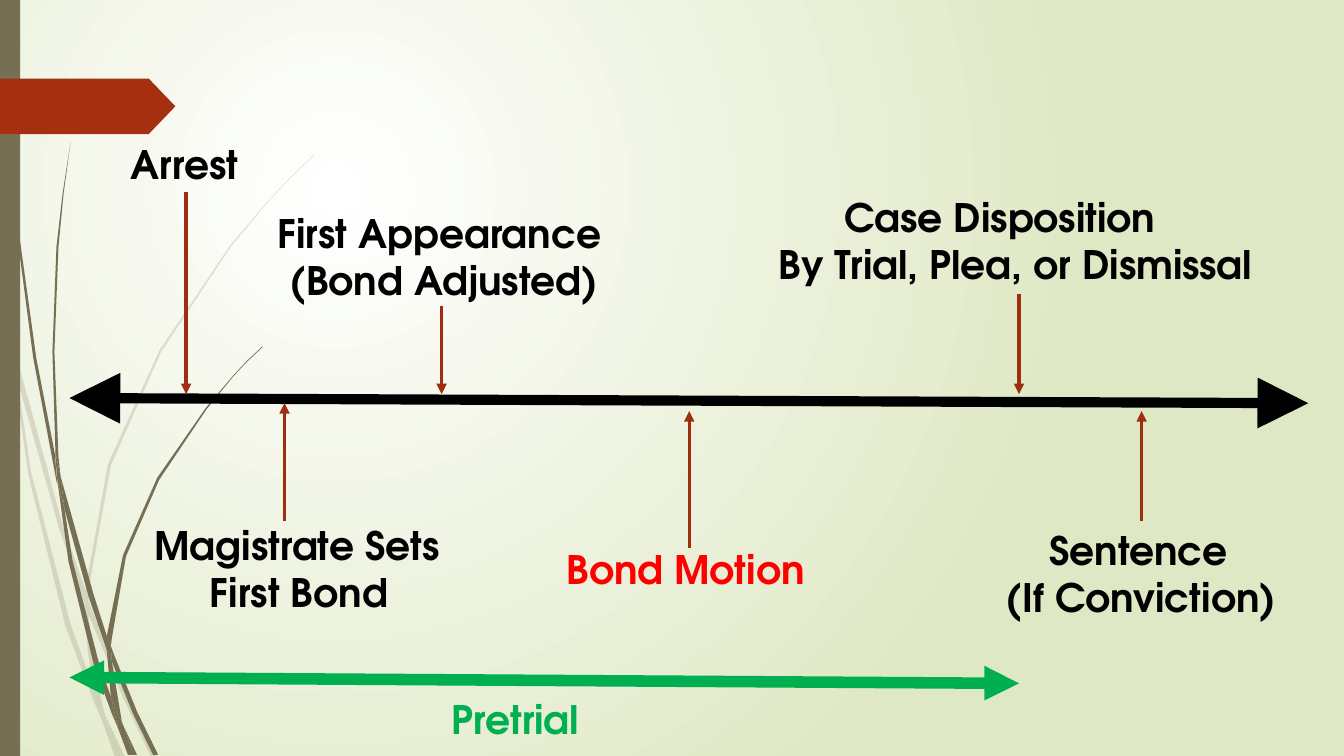
from dataclasses import dataclass
from typing import NamedTuple

from lxml.etree import SubElement
from pptx import Presentation
from pptx.dml.color import RGBColor as Rgb
from pptx.enum.shapes import MSO_CONNECTOR as Link, MSO_SHAPE as Kind
from pptx.enum.text import MSO_AUTO_SIZE as Fit
from pptx.oxml.ns import qn
from pptx.util import Cm, Pt


@dataclass(frozen=True)
class Theme:
    font: str = "TeX Gyre Adventor"
    size: float = 28
    thin: float = 2.5
    axis: float = 7.25
    span: float = 8.25
    black: str = "000000"
    red: str = "FF0000"
    green: str = "00B050"
    rust: str = "A53010"
    stem: str = "9E2E0F"
    olive: str = "766F54"
    pale: str = "FFFFFF"
    lime: str = "DFE8C4"


class Stem(NamedTuple):
    x: float
    start: float
    end: float
    site: int | None = None  # side of the label that the stem is joined to


class Line(NamedTuple):
    text: str
    indent: float = 0


@dataclass(frozen=True)
class Label:
    left: float
    top: float
    width: float
    lines: tuple[Line, ...]
    color: str
    stem: Stem | None = None


Blade = tuple[tuple[int, int], ...]

THEME = Theme()
WIDE, HIGH = 33.87, 19.05
GRID = Cm(2.54) / 100  # unit of the blade outlines

FAINT: tuple[Blade, ...] = (
    ((11, 350), (9, 322), (0, 282), (0, 299), (10, 344)),
    ((58, 522), (84, 599), (85, 586), (62, 520), (14, 345), (17, 376)),
    ((92, 607), (88, 596), (88, 610), (123, 694), (150, 751), (155, 751), (127, 692)),
    ((119, 751), (124, 751), (105, 711)),
    ((93, 683), (70, 619), (31, 469), (17, 376), (11, 350), (28, 470), (65, 621),
     (92, 693), (101, 714), (99, 707)),
    ((84, 599), (87, 646), (93, 683), (96, 692), (105, 711), (103, 706), (91, 646),
     (88, 610), (88, 608)),
    ((88, 584), (110, 462), (160, 349), (229, 245), (268, 198), (290, 175), (312, 154),
     (312, 153), (289, 175), (268, 197), (228, 244), (158, 348), (107, 461), (85, 584),
     (85, 586), (88, 596)),
    ((101, 714), (114, 751), (119, 751)),
    ((88, 608), (88, 610), (88, 596), (85, 586), (84, 599)),
    ((96, 692), (93, 683), (99, 707), (101, 714), (119, 751), (105, 711)),
)
DARK: tuple[Blade, ...] = (
    ((7, 110), (17, 233), (33, 355), (56, 477), (57, 481), (55, 457), (55, 453), (36, 355),
     (19, 232), (8, 109), (5, 48), (4, 0), (3, 0), (4, 48)),
    ((88, 592), (106, 645), (106, 633), (106, 631), (93, 590), (60, 472), (64, 505)),
    ((113, 649), (110, 641), (111, 656), (132, 708), (152, 749), (157, 749), (136, 706)),
    ((110, 691), (98, 657), (72, 556), (64, 505), (57, 477), (68, 557), (93, 659),
     (111, 708), (117, 722), (116, 717)),
    ((60, 472), (58, 453), (54, 349), (58, 245), (63, 193), (70, 141), (62, 193), (56, 245),
     (52, 349), (55, 449)),
    ((133, 749), (136, 749), (122, 719)),
    ((57, 477), (64, 505), (60, 472), (55, 449), (55, 453)),
    ((111, 633), (125, 552), (158, 476), (205, 406), (231, 374), (245, 359), (261, 344),
     (260, 344), (245, 358), (231, 373), (204, 405), (156, 474), (122, 551), (106, 631),
     (110, 641)),
    ((117, 722), (127, 749), (131, 749)),
    ((106, 645), (110, 691), (116, 706), (122, 719), (121, 716), (111, 656), (109, 651)),
    ((106, 645), (109, 651), (111, 656), (110, 641), (106, 631), (106, 633)),
    ((116, 706), (110, 691), (116, 717), (117, 722), (130, 749), (133, 749), (122, 719)),
)
LABELS = (
    Label(3.05, 3.4, 3.28, (Line("Arrest"),), THEME.black, Stem(4.69, 4.85, 9.93, 2)),
    Label(19.37, 4.75, 12.62,
          (Line("Case Disposition", 1.66), Line("By Trial, Plea, or Dismissal")),
          THEME.black, Stem(25.68, 7.39, 9.93, 2)),
    Label(6.75, 5.16, 8.86, (Line("First Appearance"), Line("(Bond Adjusted)", .3)),
          THEME.black, Stem(11.13, 7.7, 9.93)),
    Label(14.03, 13.61, 6.68, (Line("Bond Motion"),), THEME.red, Stem(17.37, 13.82, 10.36)),
    Label(3.65, 13, 7.82, (Line("Magistrate Sets"), Line("First Bond", 1.39)),
          THEME.black, Stem(7.17, 13.13, 10.16)),
    Label(25.1, 13.13, 7.34, (Line("Sentence", 1.09), Line("(If Conviction)")),
          THEME.black, Stem(28.77, 13.13, 10.36, 0)),
    Label(11.13, 17.4, 4.04, (Line("Pretrial"),), THEME.green),
)


def paint(shape, color: str, alpha: int = 100) -> None:
    shape.shadow.inherit = False
    shape.line.fill.background()
    shape.fill.solid()
    shape.fill.fore_color.rgb = Rgb.from_string(color)
    if alpha < 100:
        tone = shape.element.spPr.find(qn("a:solidFill"))[0]
        SubElement(tone, qn("a:alpha")).set("val", str(alpha * 1000))


def glow(slide) -> None:
    """Fill the background with a round gradient centred in the upper left."""
    fill = slide.background.fill
    fill.gradient()
    for stop, color in zip(fill.gradient_stops, (THEME.pale, THEME.lime)):
        stop.color.rgb = Rgb.from_string(color)
    grad = slide.element.find(".//" + qn("a:gradFill"))
    grad.remove(grad.find(qn("a:lin")))
    ring = SubElement(grad, qn("a:path"))
    ring.set("path", "circle")
    rect = SubElement(ring, qn("a:fillToRect"))
    for side, share in zip("ltrb", (50, 50, 100, 100)):
        rect.set(side, str(share * 1000))


def grow(slide, blade: Blade, alpha: int) -> None:
    """Draw one part of the grass."""
    first, *rest = blade
    form = slide.shapes.build_freeform(*first, scale=GRID)
    form.add_line_segments(rest)
    paint(form.convert_to_shape(), THEME.olive, alpha)


def arrow(slide, start: tuple[float, float], end: tuple[float, float],
          color: str, weight: float, tips: tuple[str, ...] = ("tailEnd",),
          size: str = "med"):
    line = slide.shapes.add_connector(Link.STRAIGHT, *map(Cm, start + end))
    line.line.color.rgb = Rgb.from_string(color)
    line.line.width = Pt(weight)
    stroke = line.element.spPr.find(qn("a:ln"))
    for tip in tips:
        head = SubElement(stroke, qn("a:" + tip))
        for key, value in (("type", "triangle"), ("w", size), ("len", size)):
            head.set(key, value)
    SubElement(line.element.spPr, qn("a:effectLst"))
    return line


def write(slide, label: Label) -> None:
    """Draw a label and the stem that ties it to the timeline."""
    high = .25 + 1.2 * len(label.lines)
    box = slide.shapes.add_textbox(*map(Cm, (label.left, label.top, label.width, high)))
    frame = box.text_frame
    frame.word_wrap = False
    frame.auto_size = Fit.SHAPE_TO_FIT_TEXT
    frame.text = "\n".join(line.text for line in label.lines)
    for para, line in zip(frame.paragraphs, label.lines):
        font = para.font
        font.name, font.size, font.bold = THEME.font, Pt(THEME.size), True
        font.color.rgb = Rgb.from_string(label.color)
        if line.indent:
            para._p.get_or_add_pPr().set("marL", str(Cm(line.indent)))
    if stem := label.stem:
        line = arrow(slide, (stem.x, stem.start), (stem.x, stem.end), THEME.stem, THEME.thin)
        if stem.site is not None:
            line.begin_connect(box, stem.site)


def main() -> None:
    deck = Presentation()
    deck.slide_width, deck.slide_height = Cm(WIDE), Cm(HIGH)
    slide = deck.slides.add_slide(deck.slide_layouts[6])
    glow(slide)
    for blades, alpha in ((FAINT, 20), (DARK, 100)):
        for blade in blades:
            grow(slide, blade, alpha)
    paint(slide.shapes.add_shape(Kind.RECTANGLE, 0, 0, Cm(.51), Cm(HIGH)), THEME.olive)
    flag = slide.shapes.add_shape(Kind.PENTAGON, 0, Cm(1.98), Cm(4.42), Cm(1.4))
    flag.adjustments[0] = .48
    paint(flag, THEME.rust)
    both = ("headEnd", "tailEnd")
    arrow(slide, (1.75, 10.03), (32.97, 10.16), THEME.black, THEME.axis, both, "lg")
    arrow(slide, (1.75, 17.07), (25.68, 17.22), THEME.green, THEME.span, both)
    for label in LABELS:
        write(slide, label)
    deck.save("out.pptx")


if __name__ == "__main__":
    main()
